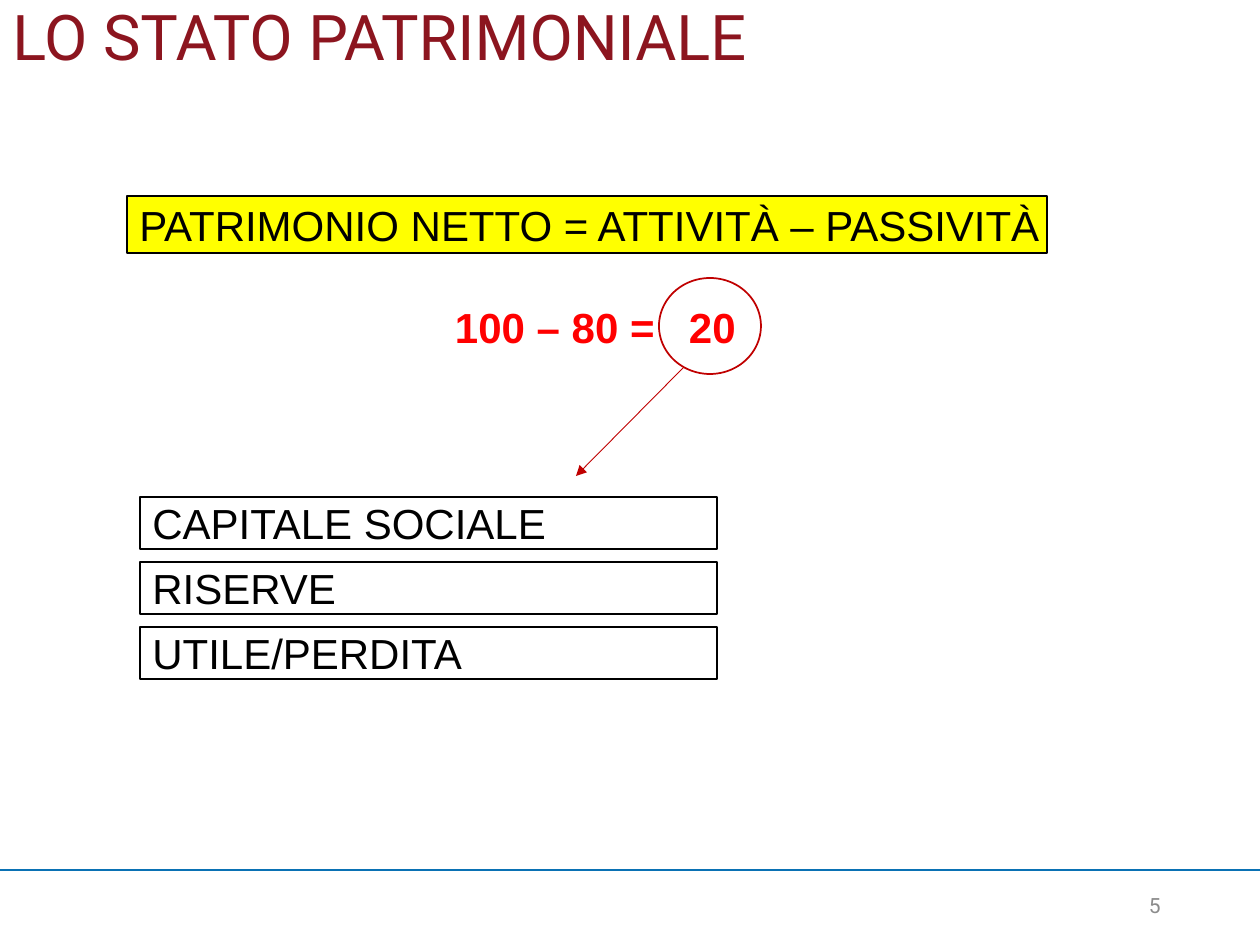
from lxml import etree
from pptx import Presentation
from pptx.dml.color import RGBColor
from pptx.enum.shapes import MSO_CONNECTOR, MSO_SHAPE
from pptx.enum.text import MSO_ANCHOR, PP_ALIGN
from pptx.oxml.ns import qn
from pptx.util import Pt

SCALE = 914400 / 126
RECT, OVAL = MSO_SHAPE.RECTANGLE, MSO_SHAPE.OVAL
STRAIGHT = MSO_CONNECTOR.STRAIGHT
MIDDLE, TOP = MSO_ANCHOR.MIDDLE, MSO_ANCHOR.TOP
LEFT, RIGHT = PP_ALIGN.LEFT, PP_ALIGN.RIGHT
COLORS = {
    "black": "000000", "yellow": "FFFF00", "red": "FF0000", "ring": "C00000",
    "title": "8C151F", "rule": "0A71B4", "page": "8C8C8C",
}
ITEMS = ["CAPITALE SOCIALE", "RISERVE", "UTILE/PERDITA"]


def px(n):
    """Turn pixels into EMU."""
    return round(n * SCALE)


def color(name):
    """Look up a colour by name."""
    return RGBColor.from_string(COLORS[name])


def write(shape, text, size, font, ink, bold=False, align=LEFT, anchor=TOP, wrap=True):
    """Put one run of text in a shape and return its paragraph."""
    frame = shape.text_frame
    frame.word_wrap = wrap
    frame.vertical_anchor = anchor
    para = frame.paragraphs[0]
    para.alignment = align
    run = para.add_run()
    run.text = text
    run.font.size = Pt(size)
    run.font.name = font
    run.font.bold = bold
    run.font.color.rgb = color(ink)
    return para


def add_text(slide, box, *args, **style):
    """Add a text box and return it with its paragraph."""
    shape = slide.shapes.add_textbox(*map(px, box))
    return shape, write(shape, *args, **style)


def add_shape(slide, kind, box, line, width, fill=None):
    """Add an outlined shape, filled or hollow."""
    shape = slide.shapes.add_shape(kind, *map(px, box))
    shape.shadow.inherit = False
    if fill:
        shape.fill.solid()
        shape.fill.fore_color.rgb = color(fill)
    else:
        shape.fill.background()
    shape.line.color.rgb = color(line)
    shape.line.width = Pt(width)
    return shape


def add_label(slide, box, text, fill=None):
    """Add a black-edged box with a caption."""
    shape = add_shape(slide, RECT, box, "black", 0.75, fill)
    write(shape, text, 24, "Arial", "black", anchor=MIDDLE, wrap=False)


def add_line(slide, ends, ink, width, arrow=False):
    """Add a straight line, with an arrowhead at its end on request."""
    line = slide.shapes.add_connector(STRAIGHT, *map(px, ends))
    line.line.color.rgb = color(ink)
    line.line.width = Pt(width)
    if arrow:
        etree.SubElement(line.line._get_or_add_ln(), qn("a:tailEnd"), type="triangle")
    etree.SubElement(line._element.spPr, qn("a:effectLst"))


def add_sum(slide):
    """Add the worked sum, with its result set at a tab stop."""
    shape, para = add_text(slide, (428, 295, 334, 63), "100 – 80 =\t20",
                           24, "Arial", "red", bold=True)
    shape.text_frame.margin_left = px(27)
    tabs = etree.SubElement(para._p.get_or_add_pPr(), qn("a:tabLst"))
    etree.SubElement(tabs, qn("a:tab"), pos=str(px(234)), algn="l")


def main():
    """Build the slide and save it."""
    deck = Presentation()
    deck.slide_width, deck.slide_height = px(1260), px(945)
    slide = deck.slides.add_slide(deck.slide_layouts[6])
    add_line(slide, (0, 870, 1260, 870), "rule", 1.5)
    add_label(slide, (127, 196, 920, 57),
              "PATRIMONIO NETTO = ATTIVITÀ – PASSIVITÀ", "yellow")
    for row, item in enumerate(ITEMS):
        add_label(slide, (140, 497 + 65 * row, 577, 52), item)
    _, title = add_text(slide, (0, 0, 1260, 140), "LO STATO PATRIMONIALE",
                        36, "Roboto", "title")
    title.line_spacing = 0.9
    add_sum(slide)
    add_shape(slide, OVAL, (659, 278, 102, 96), "ring", 1)
    add_line(slide, (684, 367, 576, 476), "ring", 0.5, arrow=True)
    add_text(slide, (890, 886, 283, 50), "5", 12, "Roboto", "page", align=RIGHT)
    deck.save("out.pptx")


if __name__ == "__main__":
    main()
